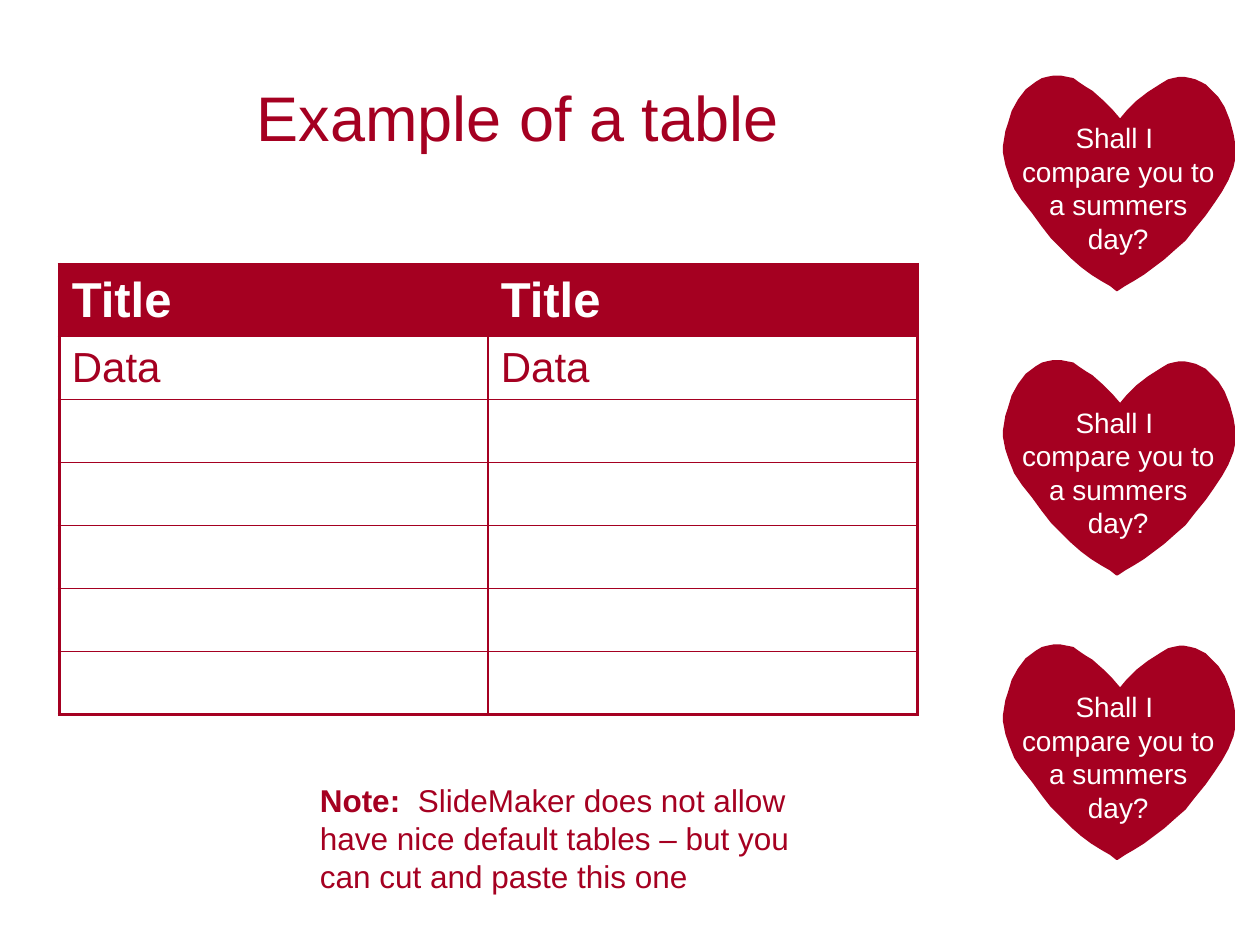
from copy import deepcopy

from lxml.etree import SubElement
from pptx import Presentation
from pptx.dml.color import RGBColor
from pptx.enum.text import MSO_ANCHOR, MSO_AUTO_SIZE, PP_ALIGN
from pptx.oxml.ns import qn
from pptx.util import Inches, Pt

CRIMSON = RGBColor(0xA5, 0x00, 0x21)
WHITE = RGBColor(0xFF, 0xFF, 0xFF)
SLIDE_W, SLIDE_H = Inches(10), Inches(7.5)
THICK, THIN = Pt(2.25), Pt(1)

TITLE = {"name": "Arial", "size": Pt(36), "bold": False}
HEADER = {"name": "Arial", "size": Pt(28), "bold": True}
DATA = {"name": "Arial", "size": Pt(24), "bold": False}
NOTE = {"name": "Arial", "size": Pt(18), "bold": False}
NOTE_LABEL = {**NOTE, "bold": True}
VERSE = {"name": "Arial", "size": Pt(16), "bold": False}

ROWS = [["Title", "Title"], ["Data", "Data"]] + [["", ""]] * 5
HEART = [
    (4, 38), (7, 28), (12, 19), (18, 11), (22, 8), (26, 5), (31, 2), (35, 1),
    (40, 0), (46, 0), (51, 1), (56, 2), (60, 5), (66, 9), (71, 12), (80, 20),
    (87, 27), (93, 34), (98, 28), (106, 20), (115, 13), (126, 6), (131, 3),
    (135, 2), (140, 1), (144, 1), (149, 2), (153, 3), (157, 5), (161, 7),
    (166, 12), (171, 17), (176, 25), (180, 35), (183, 46), (184, 52),
    (184, 61), (184, 68), (183, 73), (179, 83), (174, 92), (168, 101),
    (161, 111), (152, 122), (145, 131), (137, 138), (128, 146), (120, 152),
    (112, 158), (104, 163), (97, 167), (91, 171), (90, 171), (85, 167),
    (78, 163), (70, 158), (62, 152), (54, 145), (46, 137), (38, 129),
    (31, 120), (23, 109), (15, 99), (9, 90), (5, 80), (2, 71), (1, 66),
    (0, 61), (0, 56), (1, 50), (2, 44),
]


def across(pct):
    return round(SLIDE_W * pct / 100)


def down(pct):
    return round(SLIDE_H * pct / 100)


def box(x, y, w, h):
    return across(x), down(y), across(w), down(h)


def format_run(r, values, color):
    for key, value in values.items():
        setattr(r.font, key, value)
    r.font.color.rgb = color


def add_title(slide, text):
    sp = slide.shapes.title
    sp.left, sp.top, sp.width, sp.height = box(5, 4, 72.2, 16.7)
    tf = sp.text_frame
    tf.vertical_anchor = MSO_ANCHOR.MIDDLE
    p = tf.paragraphs[0]
    p.alignment = PP_ALIGN.CENTER
    r = p.add_run()
    r.text = text
    format_run(r, TITLE, CRIMSON)


def add_text_box(slide, place):
    tf = slide.shapes.add_textbox(*place).text_frame
    tf.word_wrap = True
    return tf


def add_heart(slide, top, text):
    builder = slide.shapes.build_freeform(*HEART[0], scale=Inches(0.01))
    builder.add_line_segments(HEART[1:], close=True)
    sp = builder.convert_to_shape(across(79.6), down(top))
    sp.shadow.inherit = False
    sp.fill.solid()
    sp.fill.fore_color.rgb = CRIMSON
    sp.line.fill.background()

    p = add_text_box(slide, box(80, top + 4.13, 17.5, 11.33)).paragraphs[0]
    p.text = text
    p.alignment = PP_ALIGN.CENTER
    for r in p.runs:
        format_run(r, VERSE, WHITE)
    for br in p._p.findall(qn("a:br")):
        br.append(deepcopy(p.runs[0]._r.rPr))


def set_borders(cell, widths):
    tc_pr = cell._tc.get_or_add_tcPr()
    for i, (side, width) in enumerate(widths.items()):
        ln = SubElement(tc_pr, qn(f"a:ln{side}"), w=str(int(width)))
        fill = SubElement(ln, qn("a:solidFill"))
        SubElement(fill, qn("a:srgbClr"), val=str(CRIMSON))
        tc_pr.insert(i, ln)


def add_grid(slide, rows):
    n_rows, n_cols = len(rows), len(rows[0])
    place = box(4.7, 28, 68.1, 47.7)
    table = slide.shapes.add_table(n_rows, n_cols, *place).table
    table.first_row = table.horz_banding = False
    for i, row in enumerate(rows):
        header = i == 0
        table.rows[i].height = Inches(0.57 if header else 0.5)
        for j, text in enumerate(row):
            cell = table.cell(i, j)
            cell.vertical_anchor = MSO_ANCHOR.MIDDLE
            if header:
                cell.fill.solid()
                cell.fill.fore_color.rgb = CRIMSON
            else:
                cell.fill.background()
            set_borders(cell, {
                "L": THICK if j == 0 else THIN,
                "R": THICK if j == n_cols - 1 else THIN,
                "T": THICK if header else THIN,
                "B": THICK if i == n_rows - 1 else THIN,
            })
            if text:
                r = cell.text_frame.paragraphs[0].add_run()
                r.text = text
                format_run(r, HEADER if header else DATA,
                           WHITE if header else CRIMSON)


def add_note(slide, parts):
    tf = add_text_box(slide, box(24.4, 82, 42.1, 13.33))
    tf.auto_size = MSO_AUTO_SIZE.SHAPE_TO_FIT_TEXT
    for text, values in parts:
        r = tf.paragraphs[0].add_run()
        r.text = text
        format_run(r, values, CRIMSON)


def main():
    prs = Presentation()
    prs.slide_width, prs.slide_height = SLIDE_W, SLIDE_H
    slide = prs.slides.add_slide(prs.slide_layouts[5])
    for i in range(3):
        add_heart(slide, 8 + i * 30.1, "Shall I \vcompare you to a summers day?")
    add_title(slide, "Example of a table")
    add_grid(slide, ROWS)
    add_note(slide, [
        ("Note:  ", NOTE_LABEL),
        ("SlideMaker does not allow have nice default tables – "
         "but you can cut and paste this one", NOTE),
    ])
    prs.save("out.pptx")


if __name__ == "__main__":
    main()
